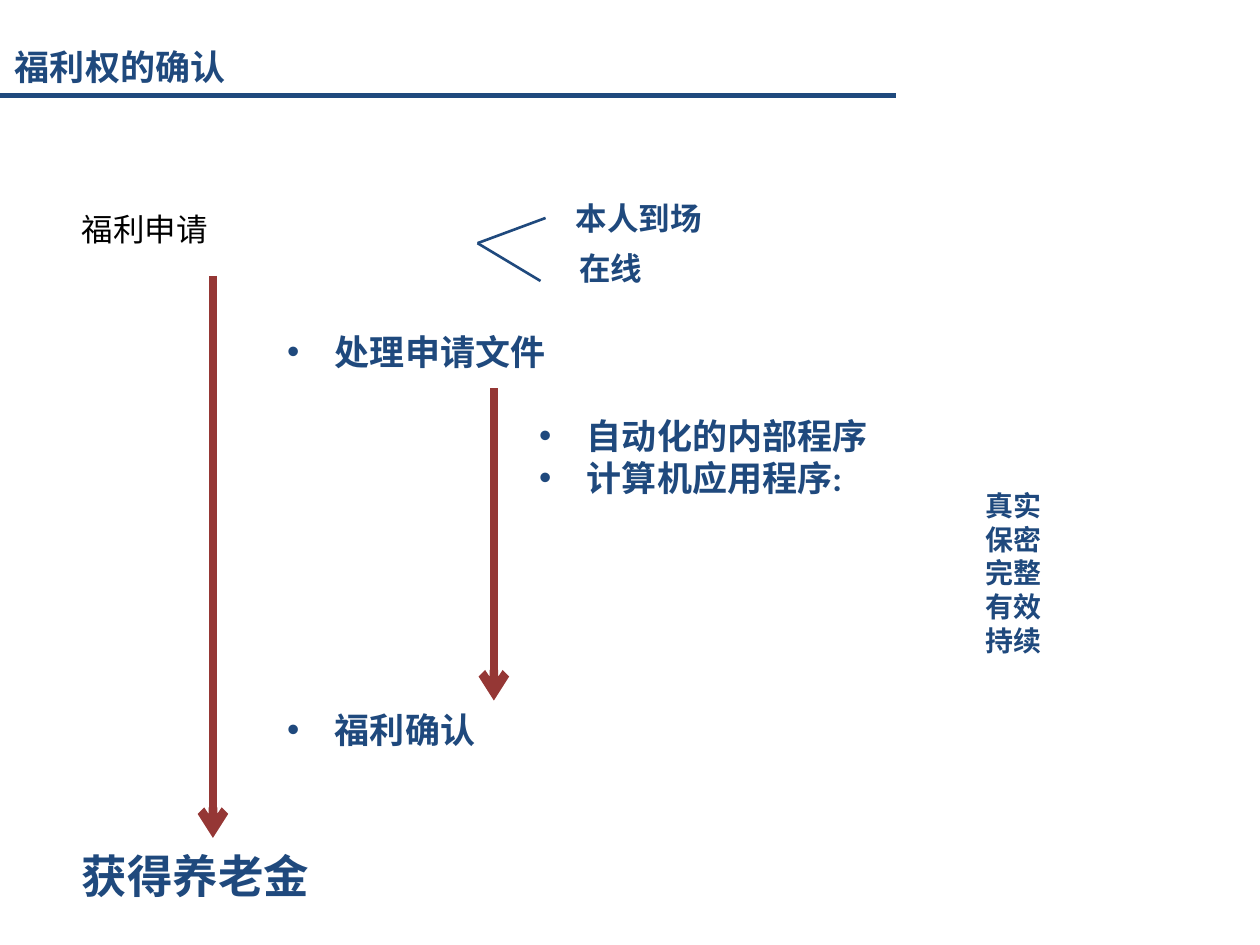
from dataclasses import dataclass

import lxml.etree
import pptx
import pptx.dml.color
import pptx.enum.shapes
import pptx.oxml.ns
import pptx.util

COLUMNS, ROWS = 100, 75
SLIDE_WIDTH, SLIDE_HEIGHT = pptx.util.Inches(10), pptx.util.Inches(7.5)


@dataclass(frozen=True)
class Theme:
    font: str = "Calibri"
    navy: str = "1F497D"
    black: str = "000000"
    red: str = "953735"
    result_size: int = 26
    heading_size: int = 20
    label_size: int = 18
    quality_size: int = 16
    rule_width: float = 3
    branch_width: float = 1.5
    arrow_width: float = 5
    line_spacing: float = 1.2  # height of one line, as a share of type size


THEME = Theme()


def col(number):
    return round(SLIDE_WIDTH * number / COLUMNS)


def row(number):
    return round(SLIDE_HEIGHT * number / ROWS)


def add_sub(parent, tag, **attributes):
    element = lxml.etree.SubElement(parent, pptx.oxml.ns.qn(tag))
    for key, value in attributes.items():
        element.set(key, str(value))
    return element


def add_text(slide, text, place, size, color=THEME.navy, bold=True):
    """Add a text box at (column, row, columns, rows), a paragraph per line."""
    left, top, width, height = place
    box = slide.shapes.add_textbox(col(left), row(top), col(width), row(height))
    box.text_frame.word_wrap = True
    box.text_frame.text = text
    for paragraph in box.text_frame.paragraphs:
        font = paragraph.runs[0].font
        font.name = THEME.font
        font.size = pptx.util.Pt(size)
        font.bold = bold
        font.color.rgb = pptx.dml.color.RGBColor.from_string(color)
    return box.text_frame


def add_bullet(paragraph, level, margin, hanging=3.8):
    paragraph.level = level
    properties = paragraph._p.get_or_add_pPr()
    properties.set("marL", str(col(margin)))
    properties.set("indent", str(-col(hanging)))
    add_sub(properties, "a:buFont", typeface="Arial")
    add_sub(properties, "a:buChar", char="•")


def add_line(slide, start, end, color, width, arrow=False):
    line = slide.shapes.add_connector(
        pptx.enum.shapes.MSO_CONNECTOR.STRAIGHT,
        col(start[0]), row(start[1]), col(end[0]), row(end[1]))
    line.line.color.rgb = pptx.dml.color.RGBColor.from_string(color)
    line.line.width = pptx.util.Pt(width)
    if arrow:
        add_sub(line.line._get_or_add_ln(), "a:tailEnd", type="arrow")
    add_sub(line._element.spPr, "a:effectLst")


def add_steps(slide):
    """Add the bulleted process: two main steps around two sub-steps."""
    steps = [  # text, level, left margin, blank lines before
        ("处理申请文件", 0, 3.8, 0),
        ("自动化的内部程序", 4, 23.8, 1),
        ("计算机应用程序:", 4, 23.8, 0),
        ("福利确认", 0, 3.8, 5),
    ]
    process = add_text(slide, "\n".join(step[0] for step in steps),
                       (21.8, 25.7, 76.2, 38), THEME.heading_size)
    line_height = THEME.heading_size * THEME.line_spacing
    for paragraph, (_, level, margin, gap) in zip(process.paragraphs, steps):
        add_bullet(paragraph, level, margin)
        paragraph.space_before = pptx.util.Pt(gap * line_height)


def main():
    presentation = pptx.Presentation()
    presentation.slide_width, presentation.slide_height = SLIDE_WIDTH, SLIDE_HEIGHT
    slide = presentation.slides.add_slide(presentation.slide_layouts[6])

    # Title and rule
    add_text(slide, "福利权的确认", (0.2, 3.1, 76.8, 4.4), THEME.heading_size)
    add_line(slide, (0, 7.6), (71.1, 7.6), THEME.navy, THEME.rule_width)

    # Start and end of the process
    add_text(slide, "福利申请", (5.5, 16.2, 18, 4), THEME.label_size,
             THEME.black, bold=False)
    add_text(slide, "获得养老金", (5.5, 66.8, 68.5, 5.4), THEME.result_size)

    # Two ways to apply
    fork = (37.9, 19.3)
    for channel, left, top, tip in [("本人到场", 44.7, 15.3, (43.3, 17.3)),
                                    ("在线", 45, 19.3, (42.9, 22.3))]:
        add_line(slide, fork, tip, THEME.navy, THEME.branch_width)
        add_text(slide, channel, (left, top, 24.7, 4), THEME.label_size)

    # Steps and the arrows along them
    add_steps(slide)
    for column, top, bottom in [(16.9, 21.9, 66.5), (39.2, 30.8, 55.6)]:
        add_line(slide, (column, top), (column, bottom), THEME.red,
                 THEME.arrow_width, arrow=True)

    # Qualities of the computer application
    add_text(slide, "真实\n保密\n完整\n有效\n持续", (77.2, 38.3, 18.9, 14.5),
             THEME.quality_size)

    presentation.save("out.pptx")


if __name__ == "__main__":
    main()
